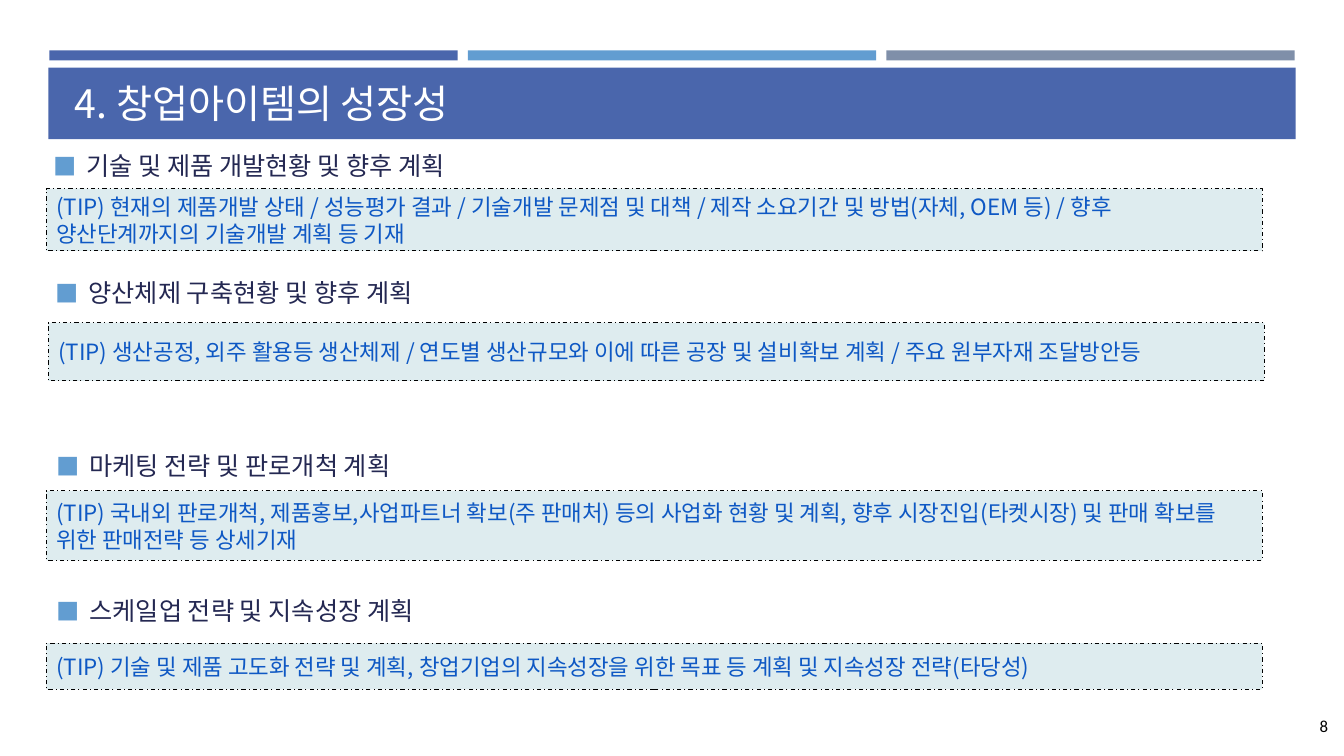
from dataclasses import dataclass

from lxml import etree
from pptx import Presentation
from pptx.dml.color import RGBColor
from pptx.enum.dml import MSO_LINE
from pptx.enum.shapes import MSO_SHAPE
from pptx.enum.text import MSO_ANCHOR, PP_ALIGN
from pptx.oxml.ns import qn
from pptx.util import Emu, Pt

RECTANGLE = MSO_SHAPE.RECTANGLE
DASH_DOT = MSO_LINE.DASH_DOT
MIDDLE = MSO_ANCHOR.MIDDLE
LEFT, RIGHT = PP_ALIGN.LEFT, PP_ALIGN.RIGHT
EMU_PER_PX = 9144  # 100 px to the inch
TITLE_ONLY = 5


@dataclass(frozen=True)
class Theme:
    indigo: str = "4A66AC"
    sky: str = "629DD1"
    slate: str = "7F8FA9"
    tip_fill: str = "DEECEF"
    tip_text: str = "0E58C4"
    navy: str = "242852"
    white: str = "FFFFFF"
    black: str = "000000"
    font: str = "Noto Sans CJK KR"
    number_font: str = "Calibri"
    title_size: int = 28
    heading_size: int = 18
    tip_size: int = 16
    number_size: int = 12


def px(length):
    return Emu(length * EMU_PER_PX)


def apply(target, values):
    for name, value in values.items():
        setattr(target, name, value)


class SlideBuilder:
    def __init__(self, page, theme):
        self.page = page
        self.theme = theme

    def place(self, shape, at):
        apply(shape, dict(zip(("left", "top", "width", "height"), map(px, at))))

    def set_text(self, shape, text, size, color, font=None, align=LEFT, spaced=False):
        font = font or self.theme.font
        apply(shape.text_frame, {"word_wrap": True, "vertical_anchor": MIDDLE})
        para = shape.text_frame.paragraphs[0]
        para.alignment = align
        if spaced:
            apply(para, {"space_before": Pt(size * 0.2), "space_after": Pt(6)})
        span = para.add_run()
        span.text = text
        apply(span.font, {"name": font, "size": Pt(size), "bold": False})
        span.font.color.rgb = RGBColor.from_string(color)
        east_asian = etree.SubElement(span.font._element, qn("a:ea"))
        east_asian.set("typeface", font)
        return para

    def bar(self, at, color):
        box = self.page.shapes.add_shape(RECTANGLE, *map(px, at))
        box.shadow.inherit = False
        box.fill.solid()
        box.fill.fore_color.rgb = RGBColor.from_string(color)
        box.line.fill.background()
        return box

    def title(self, at, text):
        """Fill the title placeholder and bring it in front of its band."""
        title = self.page.shapes.title
        self.place(title, at)
        self.set_text(title, text, self.theme.title_size, self.theme.white)
        self.page.shapes._spTree.append(title._element)

    def text_box(self, at, text, size, color, **options):
        box = self.page.shapes.add_textbox(*map(px, at))
        return self.set_text(box, text, size, color, **options)

    def heading(self, at, text):
        theme = self.theme
        para = self.text_box(at, text, theme.heading_size, theme.navy, spaced=True)
        properties = para._p.get_or_add_pPr()
        properties.set("marL", str(px(33)))
        properties.set("indent", str(px(-33)))
        bullet_color = etree.SubElement(properties, qn("a:buClr"))
        etree.SubElement(bullet_color, qn("a:srgbClr")).set("val", theme.sky)
        etree.SubElement(properties, qn("a:buSzPct")).set("val", "92000")
        etree.SubElement(properties, qn("a:buFont")).set("typeface", theme.font)
        etree.SubElement(properties, qn("a:buChar")).set("char", "■")

    def tip(self, at, text):
        theme = self.theme
        box = self.bar(at, theme.tip_fill)
        box.line.fill.solid()
        box.line.color.rgb = RGBColor.from_string(theme.black)
        apply(box.line, {"width": Pt(0.75), "dash_style": DASH_DOT})
        self.set_text(box, "(TIP) " + text, theme.tip_size, theme.tip_text, spaced=True)


# heading, its left and top; tip, its left, top and height
SECTIONS = [
    ("기술 및 제품 개발현황 및 향후 계획", 43, 139,
     "현재의 제품개발 상태 / 성능평가 결과 / 기술개발 문제점 및 대책 / "
     "제작 소요기간 및 방법(자체, OEM 등) / 향후 양산단계까지의 기술개발 계획 등 기재",
     46, 187, 62),
    ("양산체제 구축현황 및 향후 계획", 45, 265,
     "생산공정, 외주 활용등 생산체제 / 연도별 생산규모와 이에 따른 공장 및 "
     "설비확보 계획 / 주요 원부자재 조달방안등",
     48, 320, 58),
    ("마케팅 전략 및 판로개척 계획", 46, 436,
     "국내외 판로개척, 제품홍보,사업파트너 확보(주 판매처) 등의 사업화 현황 및 계획, "
     "향후 시장진입(타켓시장) 및 판매 확보를 위한 판매전략 등 상세기재",
     46, 487, 69),
    ("스케일업 전략 및 지속성장 계획", 46, 580,
     "기술 및 제품 고도화 전략 및 계획, 창업기업의 지속성장을 위한 목표 등 계획 및 "
     "지속성장 전략(타당성)",
     46, 638, 46),
]
SECTION_WIDTH, HEADING_HEIGHT = 1206, 51


def main():
    theme = Theme()
    deck = Presentation()
    apply(deck, {"slide_width": px(1333), "slide_height": px(750)})
    page = deck.slides.add_slide(deck.slide_layouts[TITLE_ONLY])
    builder = SlideBuilder(page, theme)

    for column, color in enumerate((theme.indigo, theme.sky, theme.slate)):
        builder.bar((49 + 415 * column, 50, 405, 10), color)
    builder.bar((48, 67, 1237, 71), theme.indigo)
    builder.title((64, 72, 683, 60), "4. 창업아이템의 성장성")

    for heading, left, top, tip, tip_left, tip_top, tip_height in SECTIONS:
        builder.heading((left, top, SECTION_WIDTH, HEADING_HEIGHT), heading)
        builder.tip((tip_left, tip_top, SECTION_WIDTH, tip_height), tip)

    builder.text_box((1212, 700, 115, 40), "8", theme.number_size, theme.black,
                     font=theme.number_font, align=RIGHT)
    deck.save("out.pptx")


if __name__ == "__main__":
    main()
